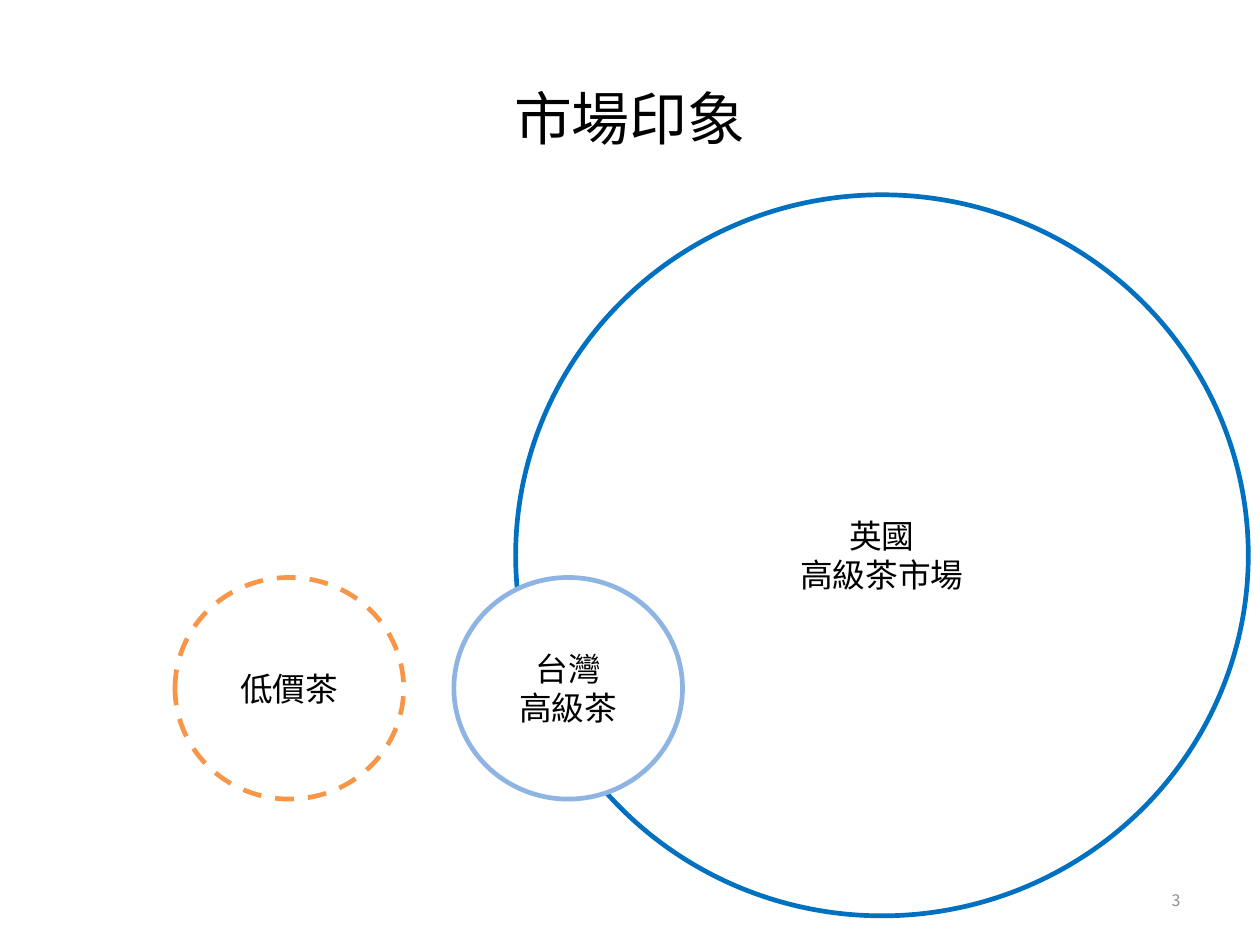
from dataclasses import dataclass

import pptx
import pptx.dml.color
import pptx.enum.dml
import pptx.enum.shapes
import pptx.enum.text
import pptx.oxml.ns
import pptx.shapes.autoshape
import pptx.slide
import pptx.text.text
import pptx.util
from lxml import etree

Pt = pptx.util.Pt
Align = pptx.enum.text.PP_ALIGN
Dash = pptx.enum.dml.MSO_LINE

HEADING_FONT = "Noto Sans CJK SC"
LABEL_FONT = "Calibri"
SMALL_CIRCLE = (98, 95)
SMALL_TOP = 247.5


@dataclass(frozen=True)
class Circle:
    lines: tuple[str, ...]
    left: float
    top: float
    size: tuple[float, float]
    outline: str
    dash: Dash = Dash.SOLID


MARKET = Circle(("英國", "高級茶市場"), 221, 83.5, (314, 309), "0070C0")
TEAS = (
    Circle(("低價茶",), 75, SMALL_TOP, SMALL_CIRCLE, "F79646", Dash.DASH),
    Circle(("台灣", "高級茶"), 194.5, SMALL_TOP, SMALL_CIRCLE, "8EB4E3"),
)


def color(value: str) -> pptx.dml.color.RGBColor:
    return pptx.dml.color.RGBColor.from_string(value)


def write(frame: pptx.text.text.TextFrame, *lines: str, size: float, font: str,
          fill: str = "000000", align: Align = Align.CENTER) -> None:
    """Fill a frame with one paragraph per line, centred vertically."""
    frame.word_wrap = True
    frame.vertical_anchor = pptx.enum.text.MSO_ANCHOR.MIDDLE
    for index, line in enumerate(lines):
        paragraph = frame.add_paragraph() if index else frame.paragraphs[0]
        paragraph.alignment = align
        run = paragraph.add_run()
        run.text = line
        run.font.size = Pt(size)
        run.font.color.rgb = color(fill)
        run.font.name = font
        latin = run.font._element.find(pptx.oxml.ns.qn("a:latin"))
        east_asian = etree.Element(pptx.oxml.ns.qn("a:ea"), typeface=font)
        latin.addnext(east_asian)


def draw_circle(slide: pptx.slide.Slide, circle: Circle) -> None:
    shape = slide.shapes.add_shape(
        pptx.enum.shapes.MSO_SHAPE.OVAL,
        Pt(circle.left), Pt(circle.top), *map(Pt, circle.size))
    shape.shadow.inherit = False
    shape.fill.solid()
    shape.fill.fore_color.rgb = color("FFFFFF")
    shape.line.color.rgb = color(circle.outline)
    shape.line.width = Pt(2)
    shape.line.dash_style = circle.dash
    write(shape.text_frame, *circle.lines, size=14, font=LABEL_FONT)


def add_box(slide: pptx.slide.Slide, left: float, top: float,
            width: float, height: float) -> pptx.text.text.TextFrame:
    box = slide.shapes.add_textbox(Pt(left), Pt(top), Pt(width), Pt(height))
    return box.text_frame


def main() -> None:
    presentation = pptx.Presentation()
    presentation.slide_width = Pt(540)
    presentation.slide_height = Pt(405)
    slide = presentation.slides.add_slide(presentation.slide_layouts[6])

    draw_circle(slide, MARKET)
    title = add_box(slide, 27, 16.5, 486, 67.5)
    write(title, "市場印象", size=24.8, font=HEADING_FONT)
    page_number = add_box(slide, 387, 375.25, 126, 21.5)
    write(page_number, "3", size=6.8, font=HEADING_FONT, fill="8C8C8C",
          align=Align.RIGHT)
    for tea in TEAS:
        draw_circle(slide, tea)

    presentation.save("out.pptx")


if __name__ == "__main__":
    main()
